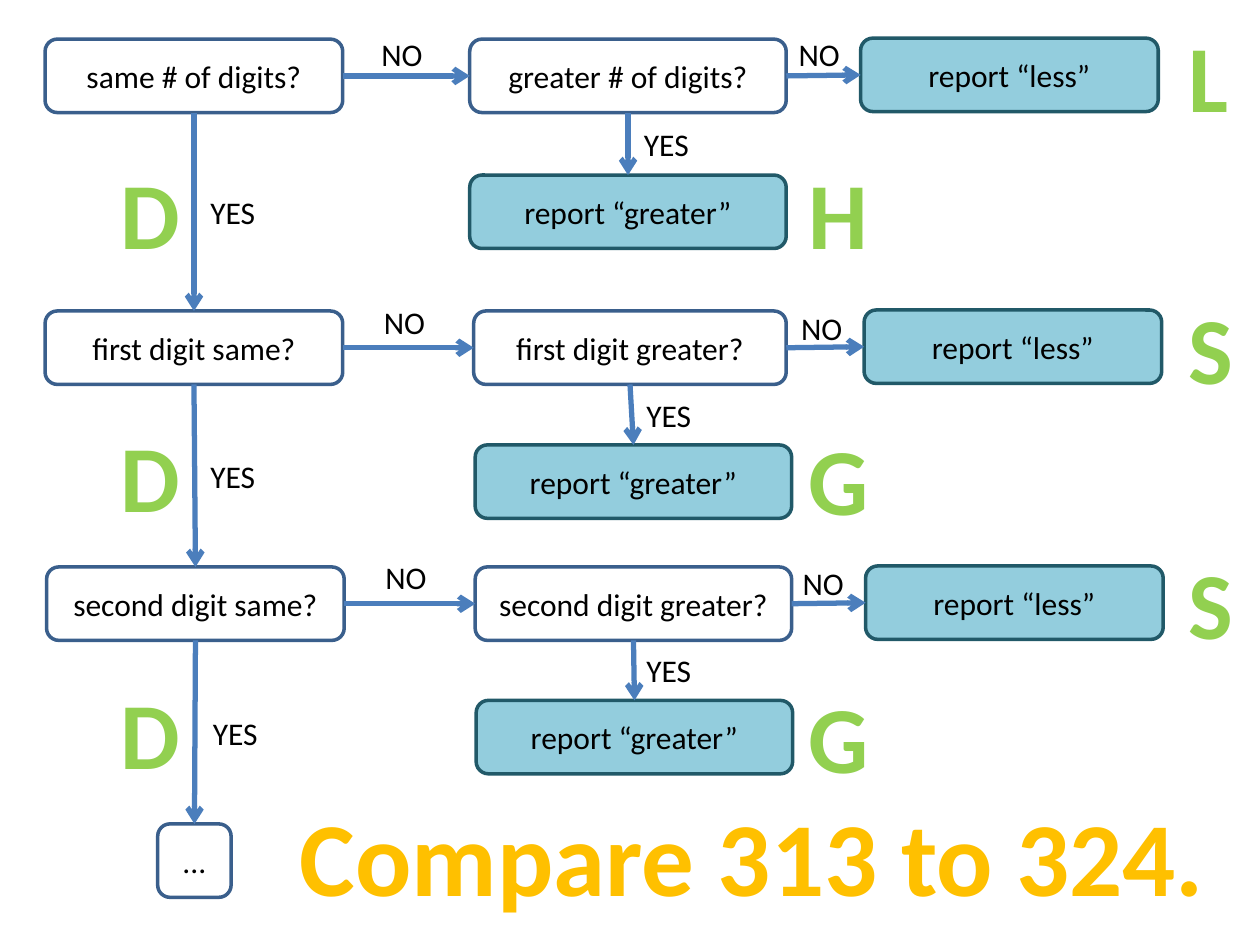
from lxml import etree
from pptx import Presentation
from pptx.dml.color import RGBColor
from pptx.enum.shapes import MSO_CONNECTOR, MSO_SHAPE
from pptx.enum.text import MSO_ANCHOR, MSO_AUTO_SIZE, PP_ALIGN
from pptx.oxml.ns import qn
from pptx.util import Cm, Pt

BOX = MSO_SHAPE.FLOWCHART_ALTERNATE_PROCESS
LINE = MSO_CONNECTOR.STRAIGHT
MID, TOP = MSO_ANCHOR.MIDDLE, MSO_ANCHOR.TOP
LEFT, CENTER = PP_ALIGN.LEFT, PP_ALIGN.CENTER
NOFIT = MSO_AUTO_SIZE.NONE
HIGH = 1.48
BLACK, GREEN, GOLD = "000000", "92D050", "FFC000"
rgb = RGBColor.from_string


def write(shape, text, size, color, align=LEFT, anchor=TOP, wrap=True):
    frame = shape.text_frame
    frame.text = text
    frame.word_wrap = wrap
    frame.auto_size = NOFIT
    frame.vertical_anchor = anchor
    para = frame.paragraphs[0]
    para.alignment = align
    font = para.runs[0].font
    font.name, font.size, font.bold = "Calibri", Pt(size), size > 18
    font.color.rgb = rgb(color)


# Slide with its title as the closing question
prs = Presentation()
prs.slide_width, prs.slide_height = Cm(25.4), Cm(19.05)
slide = prs.slides.add_slide(prs.slide_layouts[5])
shapes = slide.shapes
title = shapes.title
title.left, title.top, title.width, title.height = Cm(5.79), Cm(15.82), Cm(18.92), Cm(2.82)
write(title, "Compare 313 to 324.", 60, GOLD, wrap=False)

# Rows: top, top of the lower report, then the left edge of each column
rows = [
    (0.79, 3.53, 0.91, 9.47, 6.38, 17.35, 9.47, "same # of digits?", "greater # of digits?"),
    (6.27, 8.97, 0.91, 9.55, 6.3, 17.42, 9.58, "first digit same?", "first digit greater?"),
    (11.43, 14.12, 0.94, 9.58, 6.38, 17.45, 9.6, "second digit same?", "second digit greater?"),
]

# Boxes
boxes = []
for top, low, same, more, wide, less, great, ask, test in rows:
    boxes += [
        (same, top, 6, ask, False),
        (more, top, wide, test, False),
        (less, top - 0.02, 6, "report “less”", True),
        (great, low, 6.38, "report “greater”", True),
    ]
boxes.append((3.18, 16.61, HIGH, "...", False))

nodes = []
for x, y, wide, text, final in boxes:
    node = shapes.add_shape(BOX, Cm(x), Cm(y), Cm(wide), Cm(HIGH))
    node.shadow.inherit = False
    if final:
        node.fill.solid()
        node.fill.fore_color.rgb = rgb("93CDDD")
    else:
        node.fill.background()
    node.line.color.rgb = rgb("215968" if final else "3A5F8C")
    node.line.width = Pt(2)
    write(node, text, 18, BLACK, CENTER, MID)
    nodes.append(node)

# Arrows: right, right, down to the report, down to the next row
links = []
for i in range(0, 12, 4):
    links += [(i, 3, i + 1, 1), (i + 1, 3, i + 2, 1),
              (i + 1, 2, i + 3, 0), (i, 2, i + 4, 0)]

for start, side, end, goal in links:
    link = shapes.add_connector(LINE, 0, 0, 0, 0)
    link.begin_connect(nodes[start], side)
    link.end_connect(nodes[end], goal)
    link.line.color.rgb = rgb("4B7EBC")
    link.line.width = Pt(3)
    etree.SubElement(link.line._get_or_add_ln(), qn("a:tailEnd"), type="arrow")
    etree.SubElement(link._element.spPr, qn("a:effectLst"))

# Answers beside the arrows
answers = [
    ("NO", [(7.44, 0.58), (7.49, 5.99), (7.52, 11.13)]),
    ("NO", [(15.85, 0.58), (15.9, 6.1), (15.93, 11.25)]),
    ("YES", [(12.73, 2.39), (12.78, 7.85), (12.78, 13)]),
    ("YES", [(3.99, 3.76), (3.99, 9.09), (4.04, 14.27)]),
]
for text, spots in answers:
    for x, y in spots:
        label = shapes.add_textbox(Cm(x), Cm(y), Cm(1.48), Cm(1.03))
        write(label, text, 18, BLACK)

# Large letters, one column at a time
columns = [
    (2.18, 1.73, "DDD", (3, 8.31, 13.49)),
    (16.05, 1.73, "HGG", (3, 8.36, 13.56)),
    (23.7, 1.27, "LSS", (0.23, 5.72, 10.87)),
]
for x, wide, marks, tops in columns:
    for mark, y in zip(marks, tops):
        letter = shapes.add_textbox(Cm(x), Cm(y), Cm(wide), Cm(2.56))
        write(letter, mark, 54, GREEN, wrap=mark != "D")

prs.save("out.pptx")
